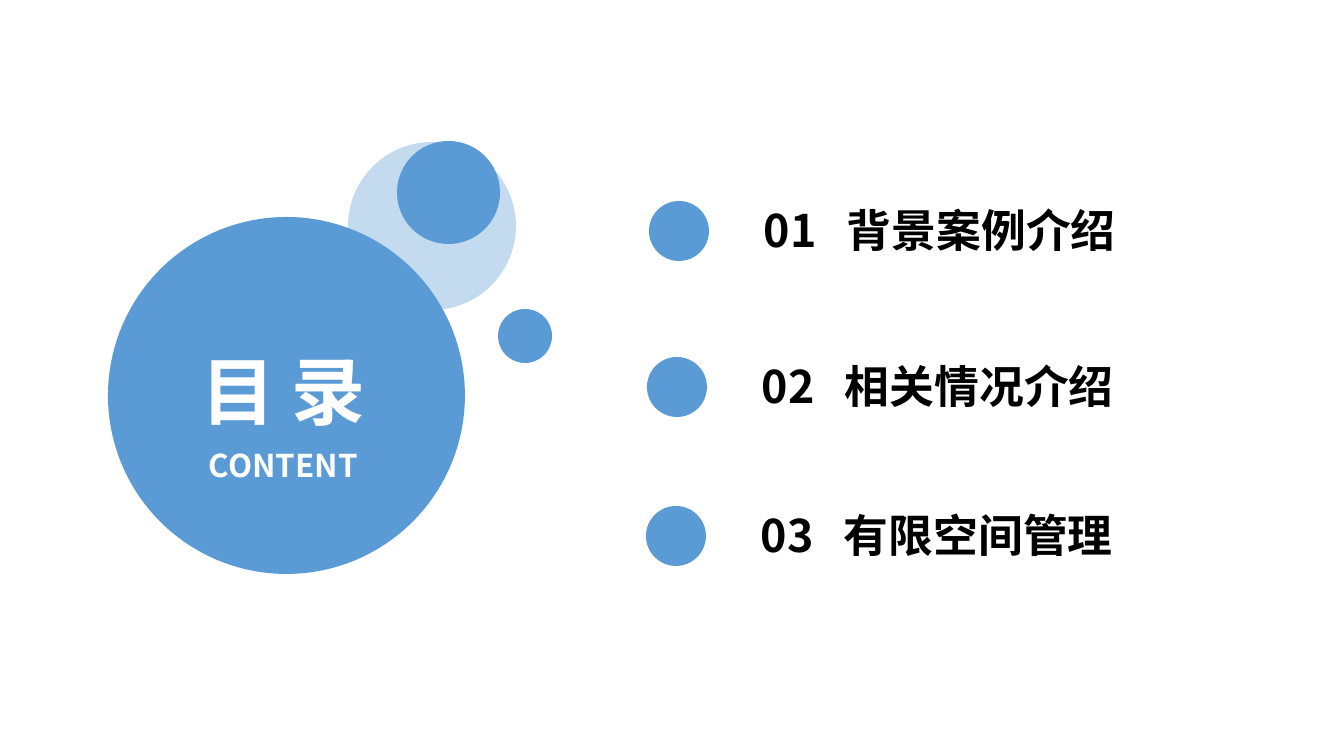
from pptx import Presentation
from pptx.dml.color import RGBColor
from pptx.enum.shapes import MSO_SHAPE as Shape
from pptx.enum.text import MSO_ANCHOR as Anchor, MSO_AUTO_SIZE as AutoSize, PP_ALIGN as Align
from pptx.oxml.ns import qn
from pptx.util import Pt
from lxml.etree import SubElement

EMU_PER_PX = 914400 / 100.8


def px(length):
    return round(length * EMU_PER_PX)


def colour(hex_value):
    return RGBColor.from_string(hex_value)


class ContentsSlide:
    FONT = "Noto Sans CJK SC"
    BLUE, WHITE, BLACK = "5B9BD5", "FFFFFF", "000000"

    def __init__(self, presentation):
        self.slide = presentation.slides.add_slide(presentation.slide_layouts[5])

    def place(self, shape, left, top, width, height):
        box = {"left": left, "top": top, "width": width, "height": height}
        for name, value in box.items():
            setattr(shape, name, px(value))

    def circle(self, left, top, diameter, opacity=100):
        shape = self.slide.shapes.add_shape(
            Shape.OVAL, px(left), px(top), px(diameter), px(diameter))
        shape.shadow.inherit = False
        shape.fill.solid()
        shape.fill.fore_color.rgb = colour(self.BLUE)
        shape.line.fill.background()
        if opacity < 100:
            fill = shape._element.spPr.find(qn("a:solidFill"))
            SubElement(fill[0], qn("a:alpha"), val=str(opacity * 1000))

    def frame(self, shape, **settings):
        for name, value in settings.items():
            setattr(shape.text_frame, name, value)

    def add_text(self, paragraph, text, size, hex_value, small_caps=False):
        run = paragraph.add_run()
        run.text = text
        style = {"name": self.FONT, "size": Pt(size), "bold": True}
        for name, value in style.items():
            setattr(run.font, name, value)
        run.font.color.rgb = colour(hex_value)
        properties = run._r.get_or_add_rPr()
        SubElement(properties, qn("a:ea"), typeface=self.FONT)
        if small_caps:
            properties.set("cap", "small")

    def title(self, left, top, width, height, lines):
        shape = self.slide.shapes.title
        self.place(shape, left, top, width, height)
        # Bring the title in front of the circles
        self.slide.shapes._spTree.append(shape._element)
        self.frame(shape, word_wrap=False, auto_size=AutoSize.SHAPE_TO_FIT_TEXT,
                   vertical_anchor=Anchor.TOP, margin_left=px(8), margin_right=px(8),
                   margin_top=px(4), margin_bottom=px(4))
        for index, (text, size) in enumerate(lines):
            text_frame = shape.text_frame
            paragraph = text_frame.add_paragraph() if index else text_frame.paragraphs[0]
            paragraph.alignment = Align.CENTER
            self.add_text(paragraph, text, size, self.WHITE, small_caps=True)

    def entry(self, left, top, number, text):
        self.circle(left, top, 60)
        shape = self.slide.shapes.add_textbox(px(left + 105), px(top - 3), px(396), px(65))
        self.frame(shape, word_wrap=True, auto_size=AutoSize.SHAPE_TO_FIT_TEXT)
        paragraph = shape.text_frame.paragraphs[0]
        tabs = SubElement(paragraph._p.get_or_add_pPr(), qn("a:tabLst"))
        SubElement(tabs, qn("a:tab"), pos=str(px(83)), algn="l")
        self.add_text(paragraph, f"{number:02d}\t{text}", 32, self.BLACK)


def main():
    presentation = Presentation()
    presentation.slide_width, presentation.slide_height = px(1344), px(756)
    contents = ContentsSlide(presentation)

    # Circle cluster
    contents.circle(348, 142, 168, opacity=36)
    for left, top, diameter in ((397, 141, 103), (498, 309, 54), (108, 217, 357)):
        contents.circle(left, top, diameter)

    # Title on the large circle
    contents.title(168, 323, 231, 167, (("目 录", 66), ("content", 28)))

    # Contents entries
    entries = ((649, 201, "背景案例介绍"), (647, 357, "相关情况介绍"), (646, 506, "有限空间管理"))
    for number, (left, top, text) in enumerate(entries, start=1):
        contents.entry(left, top, number, text)

    presentation.save("out.pptx")


if __name__ == "__main__":
    main()
